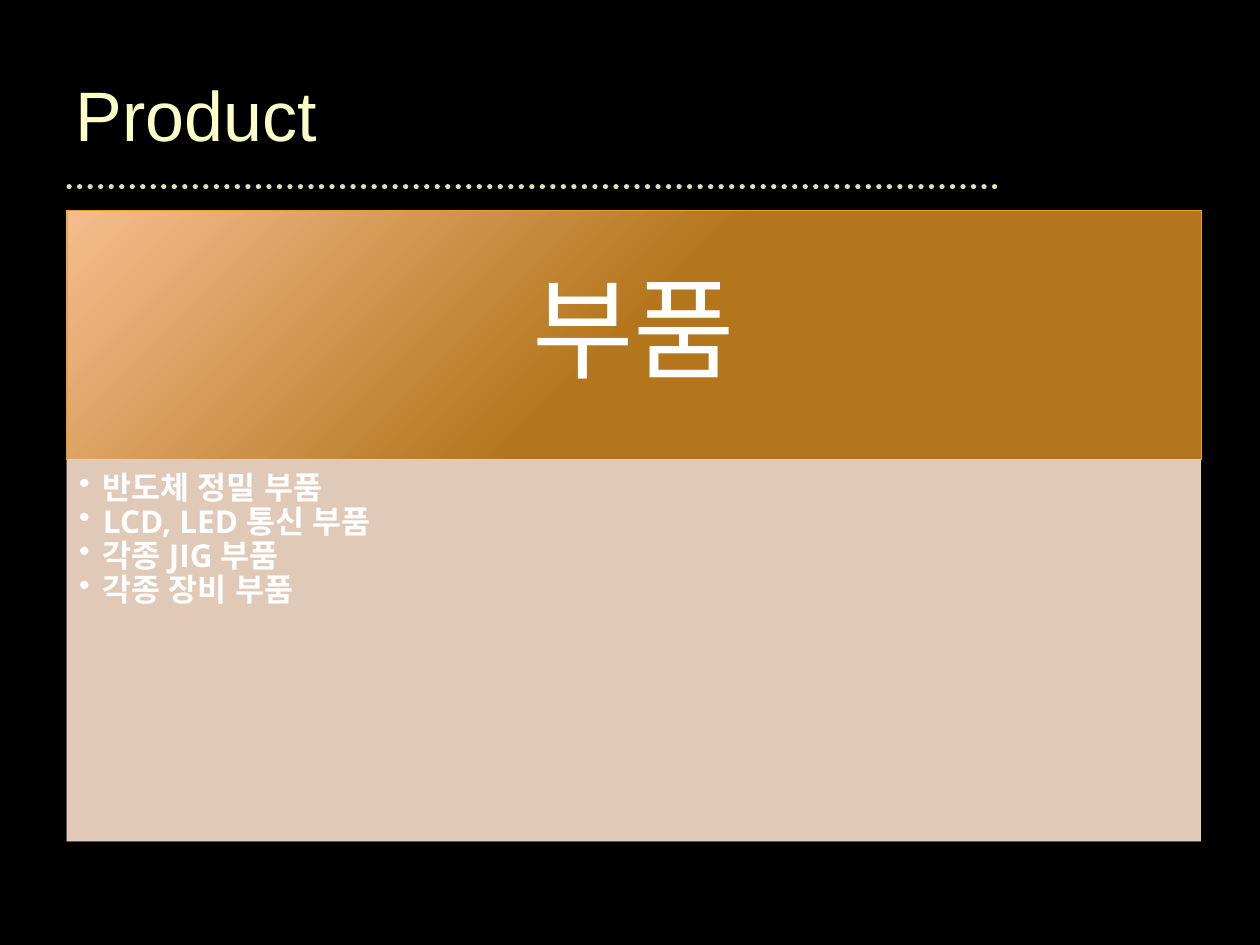
from lxml.etree import SubElement
from pptx import Presentation
from pptx.dml.color import RGBColor
from pptx.enum.dml import MSO_LINE
from pptx.enum.shapes import MSO_CONNECTOR, MSO_SHAPE
from pptx.enum.text import MSO_ANCHOR, PP_ALIGN
from pptx.oxml.ns import qn
from pptx.util import Pt

PARTS = ["반도체 정밀 부품", "LCD, LED 통신 부품", "각종 JIG 부품", "각종 장비 부품"]


def rgb(value):
    """Turn a hex string into a colour."""
    return RGBColor.from_string(value)


def style_run(p, size, font, color, bold=False):
    """Format the single run of a paragraph."""
    r = p.runs[0]
    r.font.size, r.font.name, r.font.bold = Pt(size), font, bold
    r.font.color.rgb = rgb(color)
    SubElement(r.font._element, qn("a:ea"), typeface=font)


def set_frame(tf, anchor, margins):
    """Set wrapping, anchor and the left, top, right and bottom margins."""
    tf.word_wrap = True
    tf.vertical_anchor = anchor
    tf.margin_left, tf.margin_top, tf.margin_right, tf.margin_bottom = map(Pt, margins)


def add_panel(s, x, y, w, h, line_color):
    """Add a thinly outlined rectangle without a shadow."""
    sp = s.shapes.add_shape(MSO_SHAPE.RECTANGLE, Pt(x), Pt(y), Pt(w), Pt(h))
    sp.shadow.inherit = False
    sp.line.width = Pt(0.25)
    sp.line.color.rgb = rgb(line_color)
    return sp


def add_title(s, x, y, w, h, text):
    """Add the slide title."""
    tf = s.shapes.add_textbox(Pt(x), Pt(y), Pt(w), Pt(h)).text_frame
    set_frame(tf, MSO_ANCHOR.MIDDLE, (7.2, 3.6, 7.2, 3.6))
    tf.text = text
    style_run(tf.paragraphs[0], 40, "Arial", "FBFEC6")


def add_rule(s, x, y, w):
    """Add the dotted rule below the title."""
    rule = s.shapes.add_connector(MSO_CONNECTOR.STRAIGHT, Pt(x), Pt(y), Pt(x + w), Pt(y))
    rule.line.color.rgb = rgb("DDE0AF")
    rule.line.width = Pt(3)
    rule.line.dash_style = MSO_LINE.ROUND_DOT
    rule.line._ln.set("cap", "rnd")
    SubElement(rule._element.spPr, qn("a:effectLst"))


def add_header(s, x, y, w, h, text):
    """Add the gradient header with its centred heading."""
    sp = add_panel(s, x, y, w, h, "F29F26")
    sp.fill.gradient()
    sp.fill.gradient_angle = 135
    for stop, (position, color) in zip(
        sp.fill.gradient_stops, [(0.5, "B3761C"), (1, "F5BD8E")]
    ):
        stop.position = position
        stop.color.rgb = rgb(color)
    tf = sp.text_frame
    set_frame(tf, MSO_ANCHOR.MIDDLE, (35, 20, 35, 20))
    tf.text = text
    p = tf.paragraphs[0]
    p.alignment, p.line_spacing = PP_ALIGN.CENTER, 0.9
    style_run(p, 63, "Open Sans", "FFFFFF")


def add_list(s, x, y, w, h, items):
    """Add the translucent panel with its bulleted list."""
    sp = add_panel(s, x, y, w, h, "FADFCD")
    sp.fill.solid()
    sp.fill.fore_color.rgb = rgb("FADFCD")
    for color in sp._element.spPr.iter(qn("a:srgbClr")):
        SubElement(color, qn("a:alpha"), val="90000")
    tf = sp.text_frame
    set_frame(tf, MSO_ANCHOR.TOP, (7.2, 7.2, 10, 11.5))
    tf.text = "\n".join(items)
    for p in tf.paragraphs:
        p.alignment, p.level, p.line_spacing = PP_ALIGN.LEFT, 1, 0.9
        pPr = p._p.get_or_add_pPr()
        indent = Pt(13.5)
        pPr.set("marL", str(indent))
        pPr.set("indent", str(-indent))
        SubElement(pPr, qn("a:buChar"), char="•")
        style_run(p, 18, "Open Sans", "FFFFFF", bold=True)


def main():
    """Build and save the slide."""
    prs = Presentation()
    prs.slide_width, prs.slide_height = Pt(720), Pt(540)
    s = prs.slides.add_slide(prs.slide_layouts[6])
    s.background.fill.solid()
    s.background.fill.fore_color.rgb = rgb("000000")
    add_rule(s, 39.5, 106.8, 534.5)
    add_title(s, 36, 28, 538, 73.5, "Product")
    x, y, w, header_h = 38.2, 120.2, 648, 142.5
    add_header(s, x, y, w, header_h, "부품")
    add_list(s, x, y + header_h, w, 218, PARTS)
    prs.save("out.pptx")


if __name__ == "__main__":
    main()
